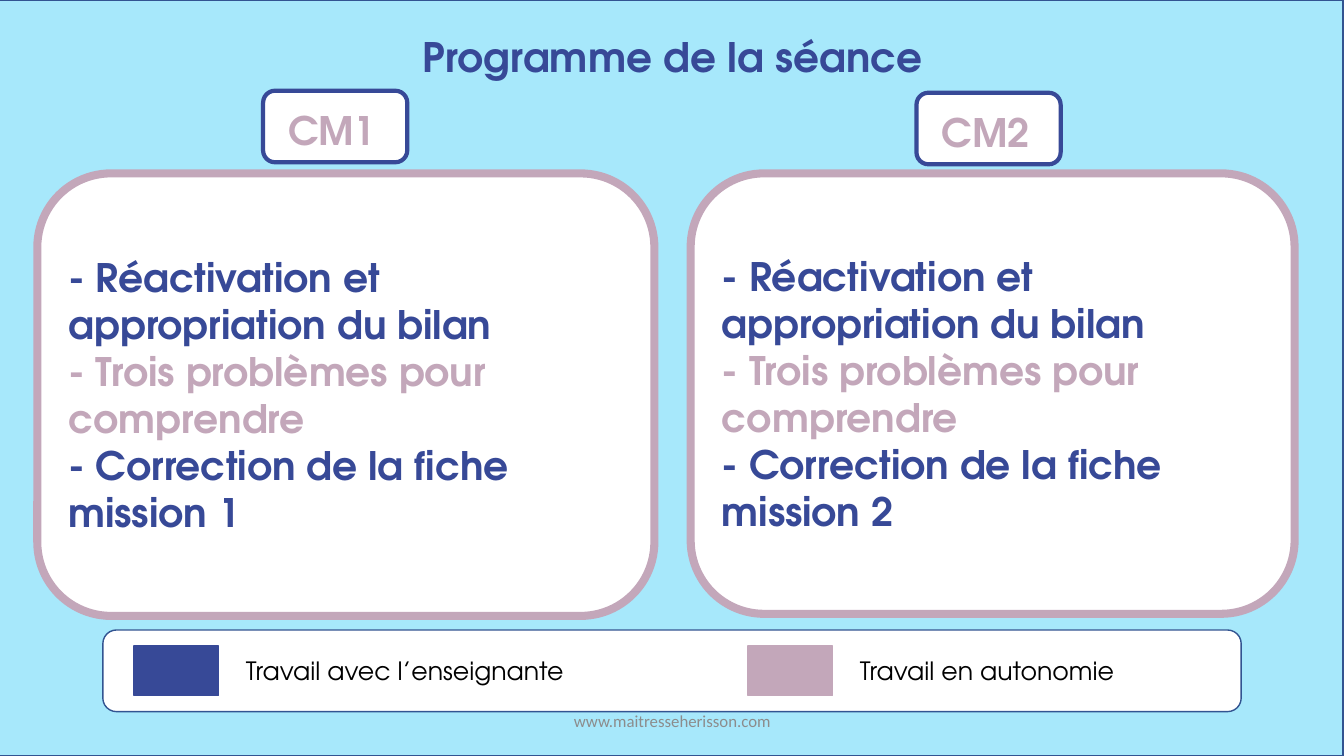
import pptx
import pptx.util
import pptx.dml.color
import pptx.enum.shapes
import pptx.enum.text
import pptx.oxml.ns
from lxml import etree
from dataclasses import dataclass

Inches = pptx.util.Inches
SHAPES = pptx.enum.shapes.MSO_SHAPE
ALIGN = pptx.enum.text.PP_ALIGN
ANCHOR = pptx.enum.text.MSO_ANCHOR


@dataclass(frozen=True)
class Theme:
    sky: str = "A7E8FB"
    white: str = "FFFFFF"
    black: str = "000000"
    outline: str = "325491"
    teacher: str = "374997"
    autonomy: str = "C3A7BA"
    grey: str = "8C8C8C"
    font: str = "TeX Gyre Adventor"
    footer_font: str = "Calibri"
    title_size: int = 29
    list_size: int = 28
    legend_size: int = 18
    footer_size: int = 12


theme = Theme()

# Content
TITLE = "Programme de la séance"
FOOTER = "www.maitresseherisson.com"
LEGEND = [
    ("Travail avec l’enseignante", theme.teacher),
    ("Travail en autonomie", theme.autonomy),
]


def session_steps(mission):
    return [
        ("- Réactivation et appropriation du bilan", theme.teacher),
        ("- Trois problèmes pour comprendre", theme.autonomy),
        (f"- Correction de la fiche mission {mission}", theme.teacher),
    ]


# Class name, steps, panel box, label left and top
CLASSES = [
    ("CM1", session_steps(1), (0.37, 1.72, 6.12, 4.39), (2.61, 0.9)),
    ("CM2", session_steps(2), (6.85, 1.72, 5.99, 4.37), (9.09, 0.92)),
]

# Layout
SLIDE_WIDTH, SLIDE_HEIGHT = 13.33, 7.5
LABEL_SIZE = (1.43, 0.71)
PANEL_INSET = 0.21  # keeps the text clear of the rounded corners
LEGEND_BOX = (1.02, 6.25, 11.29, 0.81)
LEGEND_LEFT, LEGEND_STEP = 1.33, 6.09

presentation = pptx.Presentation()
presentation.slide_width = Inches(SLIDE_WIDTH)
presentation.slide_height = Inches(SLIDE_HEIGHT)
slide = presentation.slides.add_slide(presentation.slide_layouts[3])


def rgb(color):
    return pptx.dml.color.RGBColor.from_string(color)


def add_block(kind, box, fill, line, line_width):
    shape = slide.shapes.add_shape(kind, *map(Inches, box))
    shape.shadow.inherit = False
    shape.fill.solid()
    shape.fill.fore_color.rgb = rgb(fill)
    shape.line.color.rgb = rgb(line)
    shape.line.width = pptx.util.Pt(line_width)


def write(shape, lines, size, font=theme.font, bold=False, align=ALIGN.LEFT,
          anchor=ANCHOR.TOP):
    frame = shape.text_frame
    frame.word_wrap = True
    frame.auto_size = pptx.enum.text.MSO_AUTO_SIZE.NONE
    frame.vertical_anchor = anchor
    for index, (text, color) in enumerate(lines):
        paragraph = frame.add_paragraph() if index else frame.paragraphs[0]
        paragraph.alignment = align
        paragraph.space_before = pptx.util.Pt(0)
        if shape.is_placeholder:
            properties = paragraph._p.get_or_add_pPr()
            properties.set("marL", "0")
            properties.set("indent", "0")
            etree.SubElement(properties, pptx.oxml.ns.qn("a:buNone"))
        run = paragraph.add_run()
        run.text = text
        run.font.name = font
        run.font.size = pptx.util.Pt(size)
        run.font.bold = bold
        run.font.color.rgb = rgb(color)


def add_text(box, text, color, size, **style):
    shape = slide.shapes.add_textbox(*map(Inches, box))
    write(shape, [(text, color)], size, **style)


def place(placeholder, box):
    """Set the placeholder's box and bring it in front of the blocks."""
    placeholder.left, placeholder.top, placeholder.width, placeholder.height = map(Inches, box)
    slide.shapes._spTree.append(placeholder._element)


# Background
add_block(SHAPES.RECTANGLE, (-0.01, 0, SLIDE_WIDTH, SLIDE_HEIGHT),
          theme.sky, theme.outline, 1)

# Title
title = slide.shapes.title
place(title, (0.01, 0.27, SLIDE_WIDTH, 0.59))
write(title, [(TITLE, theme.teacher)], theme.title_size, bold=True,
      align=ALIGN.CENTER)

# Class labels and panels
for number, (name, steps, panel, (label_left, label_top)) in enumerate(CLASSES, 1):
    add_block(SHAPES.ROUNDED_RECTANGLE, (label_left, label_top, *LABEL_SIZE),
              theme.white, theme.teacher, 3)
    add_text((label_left + 0.15, label_top + 0.11, 1.1, 0.57), name,
             theme.autonomy, theme.list_size, bold=True)
    add_block(SHAPES.ROUNDED_RECTANGLE, panel, theme.white, theme.autonomy, 5.75)
    left, top, width, height = panel
    steps_list = slide.placeholders[number]
    place(steps_list, (left + PANEL_INSET, top + PANEL_INSET,
                       width - 2 * PANEL_INSET, height - 2 * PANEL_INSET))
    write(steps_list, steps, theme.list_size, bold=True, anchor=ANCHOR.MIDDLE)

# Legend
add_block(SHAPES.ROUNDED_RECTANGLE, LEGEND_BOX, theme.white, theme.outline, 1)
for index, (meaning, color) in enumerate(LEGEND):
    left = LEGEND_LEFT + index * LEGEND_STEP
    add_block(SHAPES.RECTANGLE, (left, 6.41, 0.84, 0.49), color, color, 1)
    add_text((left + 1.01, 6.45, 3.42, 0.4), meaning, theme.black, theme.legend_size)

# Footer
add_text((4.42, 6.95, 4.5, 0.4), FOOTER, theme.grey, theme.footer_size,
         font=theme.footer_font, align=ALIGN.CENTER, anchor=ANCHOR.MIDDLE)

presentation.save("out.pptx")
